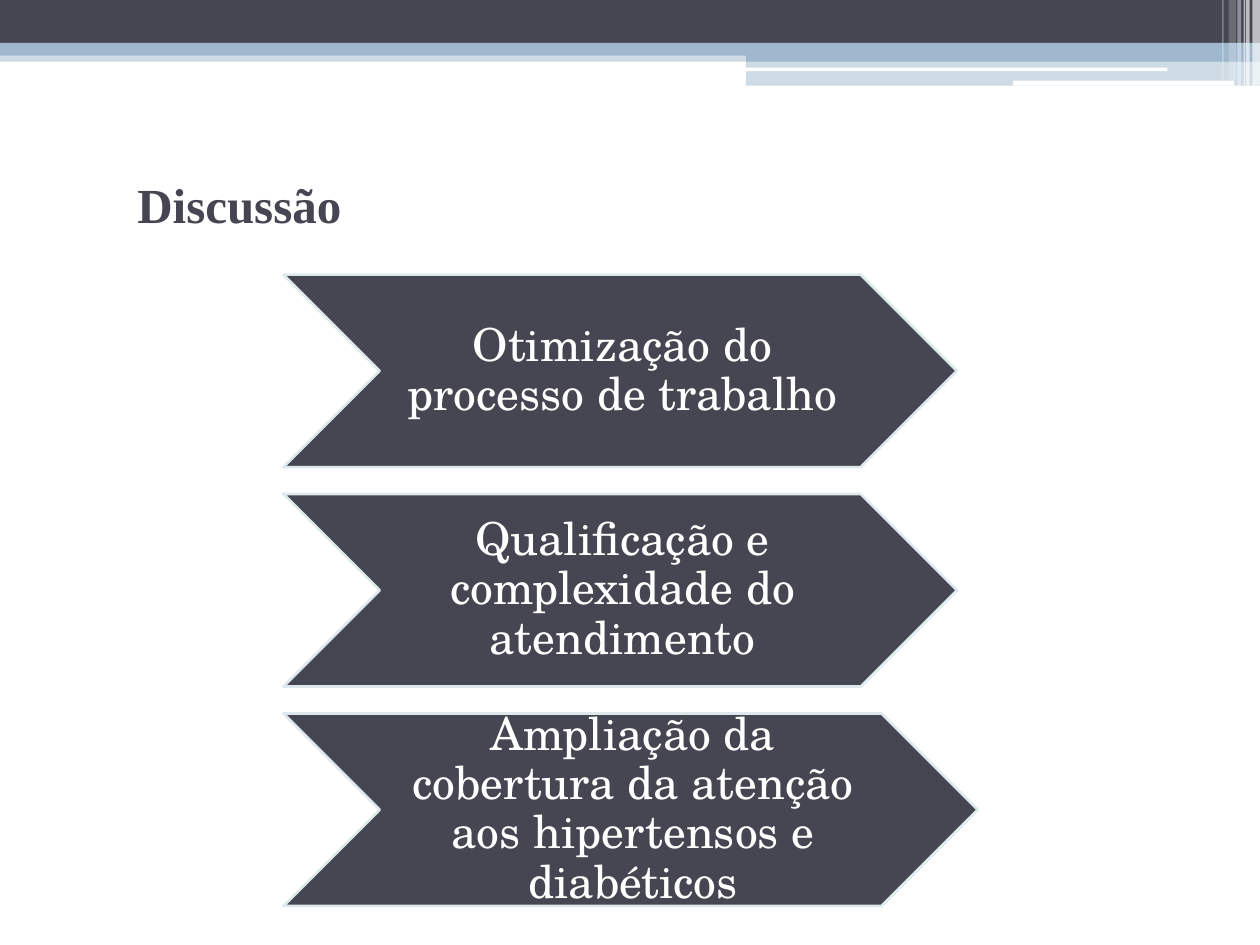
from lxml import etree
from pptx import Presentation
from pptx import util as u
from pptx.dml.color import RGBColor
from pptx.enum import shapes, text
from pptx.oxml.ns import qn

WIDTH, HEIGHT = 10, 7.5
DARK, BLUE, PALE, WHITE = "464653", "9FB8CD", "DDE9EC", "FFFFFF"
TITLE_FONT, BODY_FONT = "Times New Roman", "TeX Gyre Schola"
RECT = shapes.MSO_SHAPE.RECTANGLE
ROUND = shapes.MSO_SHAPE.ROUNDED_RECTANGLE

# left, top, width, height as shares of the box, then colour and opacity %
FULL_BANDS = [
    (0, 0.59, 1, 0.13, BLUE, 50),
    (0, 0, 1, 0.5, DARK, 100),
    (0, 0.5, 1, 0.15, BLUE, 100),
]
RIGHT_BANDS = [
    (0, 0.57, 1, 0.15, BLUE, 100),
    (0, 0.71, 1, 0.29, BLUE, 50),
]
RIGHT_LINES = [
    (0, 0.79, 0.82, 0.04, WHITE, 100),
    (0.52, 0.94, 0.43, 0.06, WHITE, 100),
]
STRIPES = [
    (0.8, 0, 0.2, 1, WHITE, 65),
    (0.63, 0, 0.1, 1, WHITE, 65),
    (0.57, 0, 0.04, 1, WHITE, 60),
    (0.4, 0, 0.1, 1, WHITE, 40),
    (0.17, 0, 0.2, 0.94, WHITE, 20),
    (0, 0, 0.04, 0.94, WHITE, 30),
]
POINTS = [
    ("Otimização do processo de trabalho", 0.97),
    ("Qualificação e complexidade do atendimento", 0.97),
    ("Ampliação da cobertura da atenção aos hipertensos e diabéticos", 1),
]


def rgb(value):
    return RGBColor.from_string(value)


def part(box, x, y, w, h):
    """Return the part of a box given by shares of its size."""
    left, top, width, height = box
    return left + x * width, top + y * height, w * width, h * height


def add_shape(s, kind, box, color, opacity=100):
    sp = s.shapes.add_shape(kind, *map(u.Inches, box))
    sp.shadow.inherit = False
    sp.line.fill.background()
    sp.fill.solid()
    sp.fill.fore_color.rgb = rgb(color)
    if opacity < 100:
        clr = sp._element.spPr.find(qn("a:solidFill"))[0]
        etree.SubElement(clr, qn("a:alpha"), val=str(opacity * 1000))
    return sp


def format_run(p, font, size, color, bold=False):
    f = p.runs[0].font
    f.name, f.size, f.bold = font, u.Pt(size), bold
    f.color.rgb = rgb(color)


def add_header(s, box):
    right = (5.92, box[1], WIDTH - 5.92, box[3])
    edge = (9.7, box[1], WIDTH - 9.7, box[3])
    for area, kind, bands in ((box, RECT, FULL_BANDS), (right, RECT, RIGHT_BANDS),
                              (right, ROUND, RIGHT_LINES), (edge, RECT, STRIPES)):
        for x, y, w, h, color, opacity in bands:
            add_shape(s, kind, part(area, x, y, w, h), color, opacity)


def set_title(s, box, title):
    sp = s.shapes.title
    sp.left, sp.top, sp.width, sp.height = map(u.Inches, box)
    tf = sp.text_frame
    tf.text = title
    tf.vertical_anchor = text.MSO_ANCHOR.MIDDLE
    p = tf.paragraphs[0]
    p.alignment = text.PP_ALIGN.JUSTIFY
    p.line_spacing = 1.5
    pPr = p._p.get_or_add_pPr()
    pPr.set("marL", "0")
    pPr.set("indent", str(u.Inches(0.49)))
    format_run(p, TITLE_FONT, 28, DARK, bold=True)


def add_chevrons(s, box, points, gap=0.14):
    """Stack chevrons in equal rows; gap is a share of the row height."""
    row = 1 / (len(points) + gap * (len(points) - 1))
    for i, (words, width) in enumerate(points):
        area = part(box, 0, i * row * (1 + gap), width, row)
        sp = add_shape(s, shapes.MSO_SHAPE.CHEVRON, area, DARK)
        sp.line.color.rgb = rgb(PALE)
        sp.line.width = u.Pt(1.5)
        tf = sp.text_frame
        tf.text = words
        tf.word_wrap = True
        tf.vertical_anchor = text.MSO_ANCHOR.MIDDLE
        tf.margin_left, tf.margin_right = u.Inches(0.04), 0
        tf.margin_top = tf.margin_bottom = u.Inches(0.02)
        p = tf.paragraphs[0]
        p.alignment = text.PP_ALIGN.CENTER
        p.line_spacing = 0.9
        format_run(p, BODY_FONT, 26, WHITE)


def main():
    prs = Presentation()
    prs.slide_width, prs.slide_height = u.Inches(WIDTH), u.Inches(HEIGHT)
    s = prs.slides.add_slide(prs.slide_layouts[5])
    add_header(s, (0, 0, WIDTH, 0.68))
    set_title(s, (0.5, 0.92, 9, 1.17), "Discussão")
    add_chevrons(s, (2.25, 2.18, 5.51, 5.01), POINTS)
    prs.save("out.pptx")


if __name__ == "__main__":
    main()
